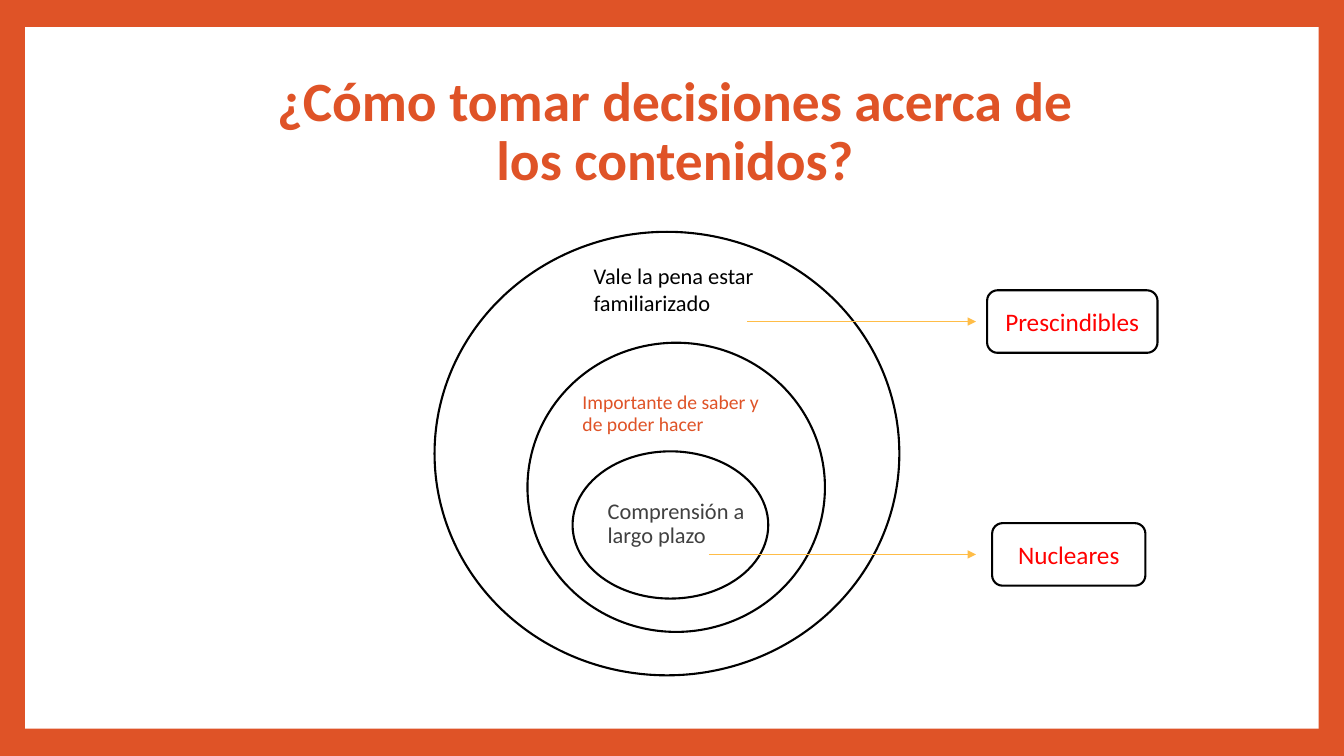
from lxml import etree
from pptx import Presentation
from pptx.dml.color import RGBColor
from pptx.enum.shapes import MSO_CONNECTOR, MSO_SHAPE
from pptx.enum.text import MSO_ANCHOR, MSO_AUTO_SIZE, PP_ALIGN
from pptx.oxml.ns import qn
from pptx.util import Inches, Pt

RECTANGLE, OVAL = MSO_SHAPE.RECTANGLE, MSO_SHAPE.OVAL
ROUNDED = MSO_SHAPE.ROUNDED_RECTANGLE
STRAIGHT = MSO_CONNECTOR.STRAIGHT
LEFT, CENTER = PP_ALIGN.LEFT, PP_ALIGN.CENTER
TOP, MIDDLE = MSO_ANCHOR.TOP, MSO_ANCHOR.MIDDLE
NO_AUTOFIT = MSO_AUTO_SIZE.NONE

TITLE_ONLY = 5
WIDTH, HEIGHT = 13.33, 7.5
FONT = "Calibri"
ORANGE, AMBER, RED = "DF5327", "FFBD47", "FF0000"
BLACK, WHITE, GRAY = "000000", "FFFFFF", "404040"


def color(value):
    return RGBColor.from_string(value)


def inches(box):
    return [Inches(length) for length in box]


def write(text_frame, text, size, text_color, bold=False, align=LEFT,
          anchor=TOP, line_spacing=1.0):
    text_frame.word_wrap = True
    text_frame.auto_size = NO_AUTOFIT
    text_frame.vertical_anchor = anchor
    paragraph = text_frame.paragraphs[0]
    paragraph.alignment = align
    paragraph.line_spacing = line_spacing
    paragraph.space_before = Pt(0)
    run = paragraph.add_run()
    run.text = text
    run.font.name = FONT
    run.font.size = Pt(size)
    run.font.bold = bold
    run.font.color.rgb = color(text_color)


def add_outline(slide, kind, box, fill=None, line=BLACK):
    shape = slide.shapes.add_shape(kind, *inches(box))
    shape.shadow.inherit = False
    if fill:
        shape.fill.solid()
        shape.fill.fore_color.rgb = color(fill)
    else:
        shape.fill.background()
    if line:
        shape.line.color.rgb = color(line)
        shape.line.width = Pt(1.5)
    else:
        shape.line.fill.background()
    return shape


def add_arrow(slide, start, end, y):
    arrow = slide.shapes.add_connector(STRAIGHT, *inches((start, y, end, y)))
    arrow.line.color.rgb = color(AMBER)
    arrow.line.width = Pt(0.79)
    properties = arrow.element.spPr
    line = properties.find(qn("a:ln"))
    etree.SubElement(line, qn("a:tailEnd"), type="triangle")
    etree.SubElement(properties, qn("a:effectLst"))


def add_frame(slide, margin_x, margin_y):
    """Orange background with a white panel inside."""
    slide.background.fill.solid()
    slide.background.fill.fore_color.rgb = color(ORANGE)
    box = (margin_x, margin_y, WIDTH - 2 * margin_x, HEIGHT - 2 * margin_y)
    panel = add_outline(slide, RECTANGLE, box, WHITE, None)
    # Keep the panel behind the title
    slide.shapes.element.insert(2, panel.element)


def add_title(slide, box):
    title = slide.shapes.title
    title.left, title.top, title.width, title.height = inches(box)
    # The bottom inset lifts the two lines above the circles
    title.text_frame.margin_top = 0
    title.text_frame.margin_bottom = Inches(0.65)
    write(title.text_frame, "¿Cómo tomar decisiones acerca de los contenidos?",
          39.6, ORANGE, True, CENTER, MIDDLE, 0.9)


def add_circles(slide, box):
    """Nested circles and their labels, as shares of the outer circle."""
    left, top, width, height = box

    def place(x, y, across, down):
        return (left + x * width, top + y * height,
                across * width, down * height)

    circles = [(0, 0, 1, 1), (0.2, 0.25, 0.64, 0.652),
               (0.297, 0.495, 0.421, 0.332)]
    for shares in circles:
        add_outline(slide, OVAL, place(*shares))

    labels = [
        ("Vale la pena estar familiarizado", 16, BLACK, 1.0,
         (0.321, 0.057, 0.425, 0.145)),
        ("Importante de saber y de poder hacer", 14, ORANGE, 0.9,
         (0.297, 0.352, 0.449, 0.12)),
        ("Comprensión a largo plazo", 16, GRAY, 0.9,
         (0.351, 0.593, 0.342, 0.134)),
    ]
    for text, size, text_color, spacing, shares in labels:
        label = slide.shapes.add_textbox(*inches(place(*shares)))
        label.text_frame.margin_right = 0
        write(label.text_frame, text, size, text_color, line_spacing=spacing)


def add_category(slide, text, box, arrow_start):
    """Rounded tag with the arrow that points to it."""
    middle = box[1] + box[3] / 2
    add_arrow(slide, arrow_start, 9.68, middle)
    tag = add_outline(slide, ROUNDED, box, WHITE)
    write(tag.text_frame, text, 18, RED, align=CENTER, anchor=MIDDLE)


def main():
    presentation = Presentation()
    presentation.slide_width = Inches(WIDTH)
    presentation.slide_height = Inches(HEIGHT)
    slide = presentation.slides.add_slide(
        presentation.slide_layouts[TITLE_ONLY])

    add_frame(slide, 0.25, 0.27)
    add_title(slide, (2.57, 0.85, 8.25, 1.59))
    add_circles(slide, (4.31, 2.3, 4.61, 4.4))
    add_category(slide, "Nucleares", (9.84, 5.19, 1.52, 0.62), 7.03)
    add_category(slide, "Prescindibles", (9.79, 2.88, 1.69, 0.62), 7.41)

    presentation.save("out.pptx")


if __name__ == "__main__":
    main()
